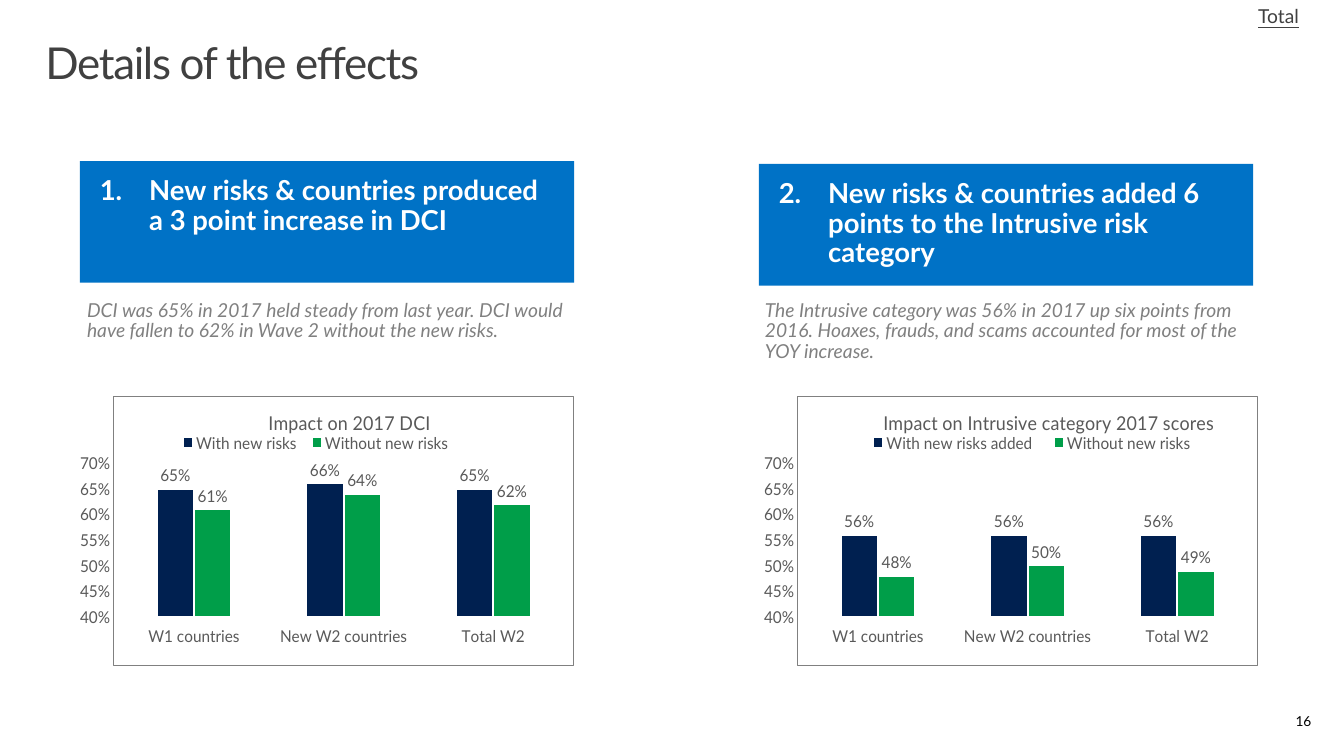
from dataclasses import dataclass

from pptx import Presentation
from pptx.chart.data import CategoryChartData
from pptx.dml.color import RGBColor
from pptx.enum.chart import XL_CHART_TYPE, XL_LABEL_POSITION, XL_LEGEND_POSITION
from pptx.enum.shapes import MSO_SHAPE
from pptx.enum.text import MSO_ANCHOR, PP_ALIGN
from pptx.oxml import parse_xml
from pptx.oxml.ns import nsdecls, qn
from pptx.util import Pt

COLUMNS = XL_CHART_TYPE.COLUMN_CLUSTERED
LABEL_OUTSIDE = XL_LABEL_POSITION.OUTSIDE_END
LEGEND_TOP = XL_LEGEND_POSITION.TOP
RECTANGLE = MSO_SHAPE.RECTANGLE
TOP, MIDDLE = MSO_ANCHOR.TOP, MSO_ANCHOR.MIDDLE
LEFT, RIGHT = PP_ALIGN.LEFT, PP_ALIGN.RIGHT


@dataclass(frozen=True)
class Theme:
    font: str = "Lato"
    ink: str = "404040"
    black: str = "000000"
    white: str = "FFFFFF"
    banner: str = "0072C6"
    note: str = "808080"
    chart_text: str = "595959"
    with_risks: str = "002050"
    without_risks: str = "009E49"
    title_size: int = 32
    banner_size: int = 20
    body_size: int = 14
    chart_size: int = 12
    page_size: int = 10


THEME = Theme()
WIDE_INSETS = (14.4, 11.52)
COUNTRIES = ["W1 countries", "New W2 countries", "Total W2"]


def style_font(font, size, color, bold=False, italic=False):
    font.name = THEME.font
    font.size = Pt(size)
    font.bold = bold
    font.italic = italic
    font.color.rgb = RGBColor.from_string(color)


def fill_text(frame, text, size, color, insets=WIDE_INSETS, align=LEFT,
              anchor=TOP, wrap=True, spacing=0.9, **emphasis):
    frame.word_wrap = wrap
    frame.vertical_anchor = anchor
    frame.margin_left = frame.margin_right = Pt(insets[0])
    frame.margin_top = frame.margin_bottom = Pt(insets[1])
    frame.text = text
    paragraph = frame.paragraphs[0]
    paragraph.alignment = align
    paragraph.line_spacing = spacing
    run = paragraph.runs[0]
    style_font(run.font, size, color, **emphasis)
    return run


def add_text(slide, box, text, size, color, **options):
    frame = slide.shapes.add_textbox(*map(Pt, box)).text_frame
    return fill_text(frame, text, size, color, **options)


def add_banner(slide, box, number, text):
    banner = slide.shapes.add_shape(RECTANGLE, *map(Pt, box))
    banner.shadow.inherit = False
    banner.fill.solid()
    banner.fill.fore_color.rgb = RGBColor.from_string(THEME.banner)
    banner.line.fill.background()
    fill_text(banner.text_frame, text, THEME.banner_size, THEME.white, bold=True)
    # Numbered heading with a hanging indent
    properties = banner.text_frame.paragraphs[0]._p.get_or_add_pPr()
    properties.set("marL", str(Pt(36)))
    properties.set("indent", str(Pt(-36)))
    properties.append(parse_xml(
        f'<a:buAutoNum {nsdecls("a")} type="arabicPeriod" startAt="{number}"/>'))


def make_layout(x, y, w=None, h=None, inner=False):
    parts = ['<c:layoutTarget val="inner"/>'] if inner else []
    parts += ['<c:xMode val="edge"/><c:yMode val="edge"/>']
    sizes = {"x": x, "y": y, "w": w, "h": h}
    parts += [f'<c:{key} val="{value}"/>' for key, value in sizes.items()
              if value is not None]
    return parse_xml(f'<c:layout {nsdecls("c")}><c:manualLayout>'
                     f'{"".join(parts)}</c:manualLayout></c:layout>')


def place_part(part, layout):
    for old in part.findall(qn("c:layout")):
        part.remove(old)
    overlay = part.find(qn("c:overlay"))
    if overlay is None:
        part.insert(0, layout)
    else:
        overlay.addprevious(layout)


def add_impact_chart(slide, box, title, title_at, legend_at, series):
    data = CategoryChartData(number_format="0%")
    data.categories = COUNTRIES
    for name, values in series:
        data.add_series(name, values)
    chart = slide.shapes.add_chart(COLUMNS, *map(Pt, box), data).chart
    style_font(chart.font, THEME.chart_size, THEME.chart_text)

    # Title and legend
    chart.has_title = True
    heading = chart.chart_title.text_frame
    heading.text = title
    style_font(heading.paragraphs[0].runs[0].font, THEME.body_size, THEME.chart_text)
    chart.has_legend = True
    chart.legend.position = LEGEND_TOP
    chart.legend.include_in_layout = False
    style_font(chart.legend.font, THEME.chart_size, THEME.chart_text)

    # Axes
    for axis in (chart.category_axis, chart.value_axis):
        axis.has_major_gridlines = False
        axis.format.line.fill.background()
        style_font(axis.tick_labels.font, THEME.chart_size, THEME.chart_text)
    scale = chart.value_axis
    scale.minimum_scale, scale.maximum_scale, scale.major_unit = 0.4, 0.7, 0.05
    scale.tick_labels.number_format = "0%"
    scale.tick_labels.number_format_is_linked = False

    # Columns and their labels
    plot = chart.plots[0]
    plot.gap_width = 200
    plot.overlap = 0
    plot.vary_by_categories = False
    for columns, color in zip(plot.series, (THEME.with_risks, THEME.without_risks)):
        columns.format.fill.solid()
        columns.format.fill.fore_color.rgb = RGBColor.from_string(color)
        columns.format.line.color.rgb = RGBColor.from_string(THEME.white)
        columns.format.line.width = Pt(1.5)
        labels = columns.data_labels
        labels.show_value = True
        labels.position = LABEL_OUTSIDE
        labels.number_format = "0%"
        labels.number_format_is_linked = False
        style_font(labels.font, THEME.chart_size, THEME.chart_text)

    # Placement of the parts and the frame
    root = chart._chartSpace.find(qn("c:chart"))
    place_part(root.find(qn("c:title")), make_layout(*title_at))
    place_part(root.find(qn("c:legend")), make_layout(*legend_at))
    place_part(root.find(qn("c:plotArea")),
               make_layout(0.013, 0.247, 0.975, 0.571, inner=True))
    root.addnext(parse_xml(
        f'<c:spPr {nsdecls("c", "a")}><a:noFill/><a:ln w="{Pt(0.75)}"><a:solidFill>'
        f'<a:srgbClr val="{THEME.note}"/></a:solidFill></a:ln></c:spPr>'))


def main():
    deck = Presentation()
    deck.slide_width, deck.slide_height = Pt(979.2), Pt(550.8)
    slide = deck.slides.add_slide(deck.slide_layouts[6])

    # Title, base and page number
    title = add_text(slide, (21.6, 23, 936, 72), "Details of the effects",
                     THEME.title_size, THEME.ink, insets=(11.5, 7.2))
    title._r.get_or_add_rPr().set("spc", "-100")
    base = add_text(slide, (902.2, -2.9, 59, 38.9), "Total",
                    THEME.body_size, THEME.ink, wrap=False)
    base.font.underline = True
    add_text(slide, (734.4, 510.5, 228.2, 29.5), "16", THEME.page_size, THEME.black,
             insets=(7.2, 3.6), align=RIGHT, anchor=MIDDLE, spacing=1.0)

    # Left: effect on DCI
    add_banner(slide, (58.3, 117.4, 360, 88.6), 1,
               "New risks & countries produced a 3 point increase in DCI")
    add_text(slide, (49, 207.4, 382.3, 54),
             "DCI was 65% in 2017 held steady from last year. DCI would have "
             "fallen to 62% in Wave 2 without the new risks.",
             THEME.body_size, THEME.note, italic=True)
    add_impact_chart(slide, (58.3, 288.7, 360, 196.6), "Impact on 2017 DCI",
                     (0.33, 0.03), (0.13, 0.12, 0.62, 0.1),
                     [("With new risks", (0.65, 0.66, 0.65)),
                      ("Without new risks", (0.61, 0.64, 0.62))])

    # Right: effect on the Intrusive category
    add_banner(slide, (553, 119.5, 360, 88.6), 2,
               "New risks & countries added 6 points to the Intrusive risk category")
    add_text(slide, (542.9, 207.4, 381.6, 69.1),
             "The Intrusive category was 56% in 2017 up six points from 2016. "
             "Hoaxes, frauds, and scams accounted for most of the YOY increase.",
             THEME.body_size, THEME.note, italic=True)
    add_impact_chart(slide, (556.6, 288.7, 360, 196.6),
                     "Impact on Intrusive category 2017 scores",
                     (0.18, 0.03), (0.13, 0.12, 0.76, 0.1),
                     [("With new risks added", (0.56, 0.56, 0.56)),
                      ("Without new risks", (0.48, 0.5, 0.49))])

    deck.save("out.pptx")


if __name__ == "__main__":
    main()
